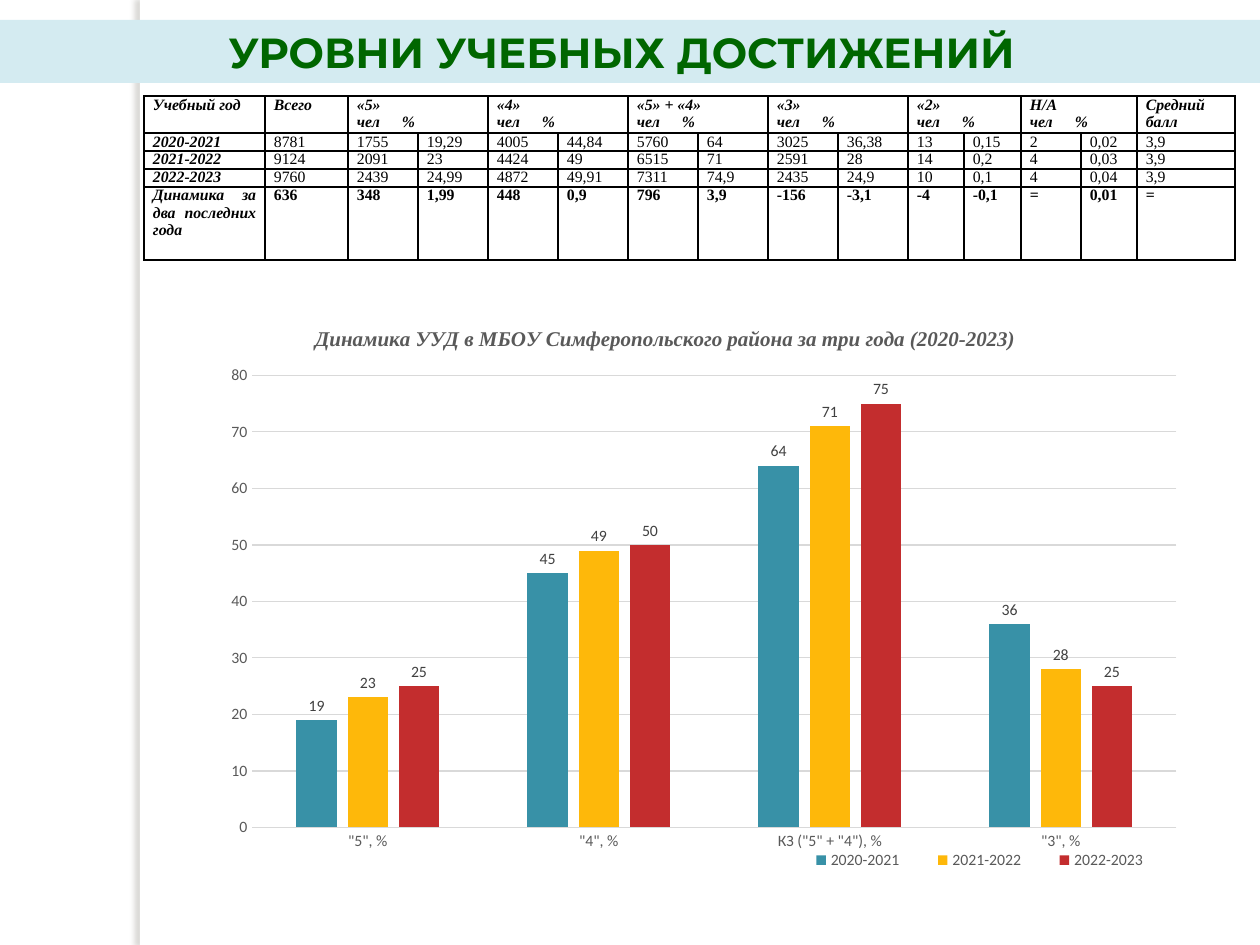
from dataclasses import dataclass
from lxml import etree
from pptx import Presentation
from pptx import util as u
from pptx.chart.data import CategoryChartData
from pptx.dml.color import RGBColor
from pptx.enum import chart as charts, shapes, text
from pptx.oxml.ns import qn


@dataclass(frozen=True)
class Theme:
    white: str = "FFFFFF"
    black: str = "000000"
    band: str = "D4EBF1"
    heading: str = "006600"
    shadow: str = "736F63"
    grid: str = "D9D9D9"
    muted: str = "595959"
    label: str = "404040"
    series: tuple = ("3891A7", "FEB80A", "C32D2E")
    heading_font: str = "Montserrat"
    table_font: str = "Times New Roman"
    chart_font: str = "Calibri"
    heading_size: int = 24
    chart_title_size: int = 12
    small_size: int = 9


theme = Theme()
PX = 914400 / 126


def format_font(font, *, name, size, color, bold=False, italic=False):
    font.name, font.size, font.bold, font.italic = name, u.Pt(size), bold, italic
    font.color.rgb = RGBColor.from_string(color)


def write(frame, content, *, align, tab=None, **font_format):
    for index, line in enumerate(content.split("\n")):
        paragraph = frame.paragraphs[0] if index == 0 else frame.add_paragraph()
        paragraph.alignment = align
        if tab and "\t" in line:
            properties = paragraph._p.get_or_add_pPr()
            tabs = etree.SubElement(properties, qn("a:tabLst"))
            etree.SubElement(tabs, qn("a:tab"), pos=str(round(tab * PX)), algn="l")
        run = paragraph.add_run()
        run.text = line
        format_font(run.font, **font_format)


presentation = Presentation()
presentation.slide_width, presentation.slide_height = u.Inches(10), u.Inches(7.5)
slide = presentation.slides.add_slide(presentation.slide_layouts[5])

title = slide.shapes.title
title.left, title.top, title.width, title.height = (round(n * PX) for n in (-5, 20, 1265, 63))
title.fill.solid()
title.fill.fore_color.rgb = RGBColor.from_string(theme.band)
title.text_frame.auto_size = text.MSO_AUTO_SIZE.NONE
title.text_frame.vertical_anchor = text.MSO_ANCHOR.MIDDLE
write(title.text_frame, "УРОВНИ УЧЕБНЫХ ДОСТИЖЕНИЙ ", align=text.PP_ALIGN.CENTER,
      name=theme.heading_font, size=theme.heading_size, color=theme.heading, bold=True)

strip = slide.shapes.add_shape(shapes.MSO_SHAPE.RECTANGLE,
                               *(round(n * PX) for n in (140, 0, 10, 945)))
strip.fill.solid()
strip.fill.fore_color.rgb = RGBColor.from_string(theme.white)
strip.line.fill.background()
strip.shadow.inherit = False
effects = strip.element.spPr.find(qn("a:effectLst"))
shadow = etree.SubElement(effects, qn("a:outerShdw"), blurRad=str(u.Pt(3)), dist=str(u.Pt(3)),
                          dir="10800000", algn="tl", rotWithShape="0")
shadow_color = etree.SubElement(shadow, qn("a:srgbClr"), val=theme.shadow)
etree.SubElement(shadow_color, qn("a:alpha"), val="25000")
title.element.addprevious(strip.element)

column_widths = [121, 83] + [70] * 8 + [56, 57, 60, 56, 98]
row_heights = [37, 18, 18, 18, 73]
headers = ["Учебный год", "Всего"]
for grade in ("«5»", "«4»", "«5» + «4»", "«3»", "«2»", "Н/А"):
    headers += [f"{grade}\nчел\t%", None]
headers.append("Средний балл")
rows = [
    headers,
    "2020-2021|8781|1755|19,29|4005|44,84|5760|64|3025|36,38|13|0,15|2|0,02|3,9".split("|"),
    "2021-2022|9124|2091|23|4424|49|6515|71|2591|28|14|0,2|4|0,03|3,9".split("|"),
    "2022-2023|9760|2439|24,99|4872|49,91|7311|74,9|2435|24,9|10|0,1|4|0,04|3,9".split("|"),
    "Динамика за два последних года|636|348|1,99|448|0,9|796|3,9|-156|-3,1|-4|-0,1|=|0,01|=".split("|"),
]
bounds = (144, 96, sum(column_widths), sum(row_heights))
table = slide.shapes.add_table(len(rows), len(column_widths), *(round(n * PX) for n in bounds)).table
table.first_row = table.horz_banding = False
for column, width in zip(table.columns, column_widths):
    column.width = round(width * PX)
for row, height in zip(table.rows, row_heights):
    row.height = round(height * PX)
for column in range(2, 14, 2):
    table.cell(0, column).merge(table.cell(0, column + 1))

for row_index, values in enumerate(rows):
    for column_index, value in enumerate(values):
        cell = table.cell(row_index, column_index)
        cell.margin_left = cell.margin_right = round(9 * PX)
        cell.margin_top = cell.margin_bottom = 0
        cell.fill.background()
        cell_properties = cell._tc.get_or_add_tcPr()
        for position, side in enumerate(("lnL", "lnR", "lnT", "lnB")):
            border = etree.Element(qn(f"a:{side}"), w=str(u.Pt(1)))
            border_fill = etree.SubElement(border, qn("a:solidFill"))
            etree.SubElement(border_fill, qn("a:srgbClr"), val=theme.black)
            cell_properties.insert(position, border)
        if value is not None:
            emphasis = row_index == 0 or column_index == 0
            write(cell.text_frame, value, align=text.PP_ALIGN.JUSTIFY, tab=45,
                  name=theme.table_font, size=theme.small_size, color=theme.black,
                  bold=emphasis or row_index == len(rows) - 1, italic=emphasis)

chart_data = CategoryChartData()
chart_data.categories = ['"5", %', '"4", %', 'КЗ ("5" + "4"), %', '"3", %']
chart_data.add_series("2020-2021", (19, 45, 64, 36))
chart_data.add_series("2021-2022", (23, 49, 71, 28))
chart_data.add_series("2022-2023", (25, 50, 75, 25))
chart = slide.shapes.add_chart(charts.XL_CHART_TYPE.COLUMN_CLUSTERED,
                               *(round(n * PX) for n in (213, 304, 983, 595)), chart_data).chart
small_text = dict(name=theme.chart_font, size=theme.small_size, color=theme.muted)
format_font(chart.font, **small_text)
chart.has_title = True
write(chart.chart_title.text_frame,
      "Динамика УУД в МБОУ Симферопольского района за три года (2020-2023)",
      align=text.PP_ALIGN.CENTER, name=theme.table_font, size=theme.chart_title_size,
      color=theme.muted, bold=True, italic=True)
chart.has_legend = True
chart.legend.position = charts.XL_LEGEND_POSITION.BOTTOM
chart.legend.include_in_layout = False
format_font(chart.legend.font, **small_text)

plot = chart.plots[0]
plot.gap_width, plot.overlap, plot.vary_by_categories = 219, -27, False
for series, color in zip(plot.series, theme.series):
    series.format.fill.solid()
    series.format.fill.fore_color.rgb = RGBColor.from_string(color)
    labels = series.data_labels
    labels.show_value = True
    labels.position = charts.XL_LABEL_POSITION.OUTSIDE_END
    format_font(labels.font, **{**small_text, "color": theme.label})

for axis in (chart.category_axis, chart.value_axis):
    axis.major_tick_mark = axis.minor_tick_mark = charts.XL_TICK_MARK.NONE
    format_font(axis.tick_labels.font, **small_text)
chart.value_axis.minimum_scale, chart.value_axis.maximum_scale = 0, 80
chart.value_axis.major_unit = 10
chart.value_axis.format.line.fill.background()
for line in (chart.category_axis.format.line, chart.value_axis.major_gridlines.format.line):
    line.width = u.Pt(0.75)
    line.color.rgb = RGBColor.from_string(theme.grid)

chart_element = chart.element.find(qn("c:chart"))
layouts = (
    ("title", 1, {"x": 0.1, "y": 0.03}),
    ("plotArea", 0, {"x": 0.04, "y": 0.12, "w": 0.94, "h": 0.76}),
    ("legend", 1, {"x": 0.58, "y": 0.91, "w": 0.4, "h": 0.05}),
)
for part, position, fractions in layouts:
    element = chart_element.find(qn(f"c:{part}"))
    for previous in element.findall(qn("c:layout")):
        element.remove(previous)
    layout = etree.Element(qn("c:layout"))
    manual = etree.SubElement(layout, qn("c:manualLayout"))
    if part == "plotArea":
        etree.SubElement(manual, qn("c:layoutTarget"), val="inner")
    for axis_name in ("x", "y"):
        etree.SubElement(manual, qn(f"c:{axis_name}Mode"), val="edge")
    for dimension, fraction in fractions.items():
        etree.SubElement(manual, qn(f"c:{dimension}"), val=str(fraction))
    element.insert(position, layout)

presentation.save("out.pptx")
